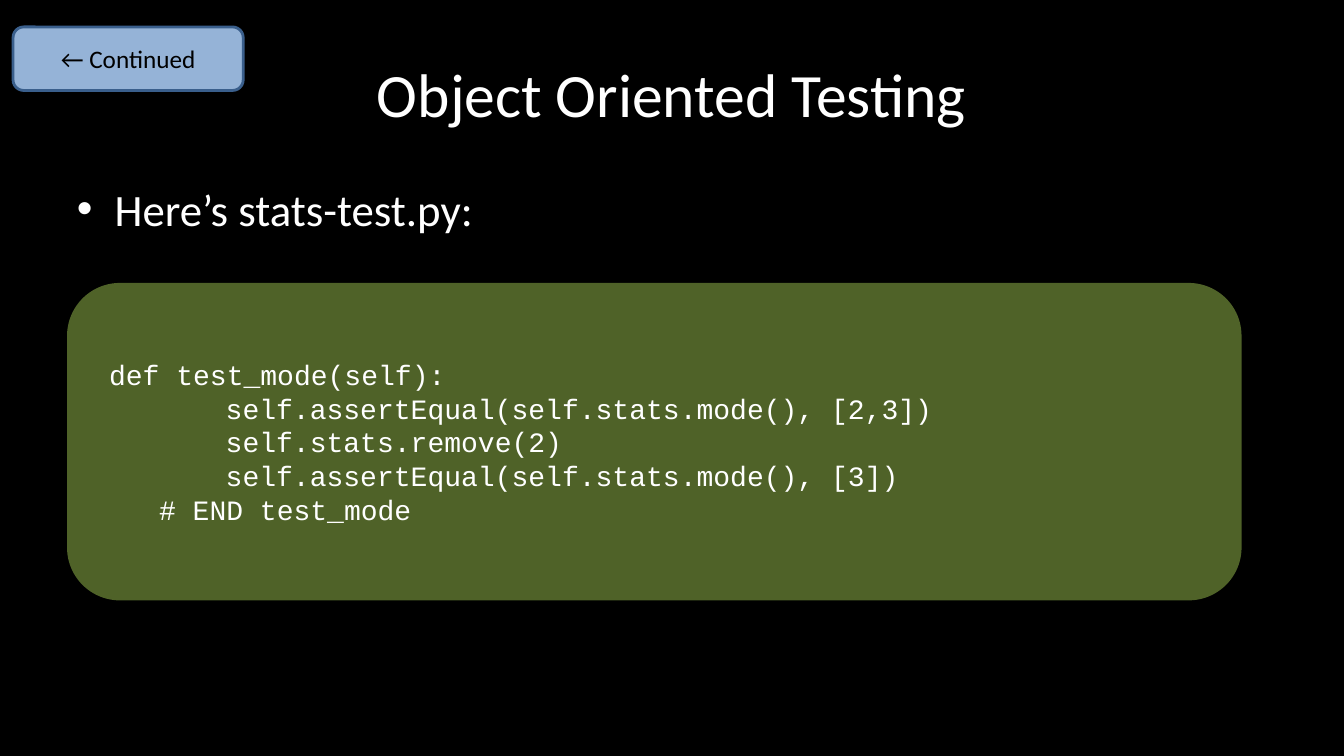
import pptx
import pptx.dml.color
import pptx.enum.shapes
import pptx.enum.text
import pptx.util
from lxml import etree

Cm, Pt = pptx.util.Cm, pptx.util.Pt
ROUNDED = pptx.enum.shapes.MSO_SHAPE.ROUNDED_RECTANGLE
MIDDLE = pptx.enum.text.MSO_ANCHOR.MIDDLE
LEFT, CENTER = pptx.enum.text.PP_ALIGN.LEFT, pptx.enum.text.PP_ALIGN.CENTER


def rgb(value):
    return pptx.dml.color.RGBColor.from_string(value)


def write(sp, text, size, color="FFFFFF", font="Calibri", align=LEFT, anchor=MIDDLE):
    tf = sp.text_frame
    tf.word_wrap = True
    tf.vertical_anchor = anchor
    tf.text = text
    for p in tf.paragraphs:
        p.alignment = align
        for r in p.runs:
            r.font.size = Pt(size)
            r.font.name = font
            r.font.color.rgb = rgb(color)
    return tf.paragraphs


prs = pptx.Presentation()
prs.slide_width, prs.slide_height = Cm(33.87), Cm(19.05)
s = prs.slides.add_slide(prs.slide_layouts[6])
s.background.fill.solid()
s.background.fill.fore_color.rgb = rgb("000000")

# Bulleted introduction
intro = s.shapes.add_textbox(Cm(1.69), Cm(4.45), Cm(30.48), Cm(12.57))
p = write(intro, "Here’s stats-test.py:", 32,
          anchor=pptx.enum.text.MSO_ANCHOR.TOP)[0]
p.space_before = Pt(6.4)
pPr = p._p.get_or_add_pPr()
pPr.set("marL", str(Cm(0.95)))
pPr.set("indent", str(-Cm(0.95)))
ns = pptx.oxml.ns.qn
etree.SubElement(pPr, ns("a:buFont")).set("typeface", "Arial")
etree.SubElement(pPr, ns("a:buChar")).set("char", "•")

# Title
title = s.shapes.add_textbox(Cm(1.69), Cm(0.76), Cm(30.48), Cm(3.18))
write(title, "Object Oriented Testing", 44, align=CENTER)

# Continuation tag
tag = s.shapes.add_shape(ROUNDED, Cm(0.33), Cm(0.68), Cm(5.8), Cm(1.6))
tag.shadow.inherit = False
tag.fill.solid()
tag.fill.fore_color.rgb = rgb("95B3D7")
tag.line.color.rgb = rgb("3A5F8C")
tag.line.width = Pt(2)
write(tag, "← Continued", 18, color="000000", align=CENTER)

# Code panel, each line indented by a number of characters
code = [
    (1, "def test_mode(self):"),
    (8, "self.assertEqual(self.stats.mode(), [2,3])"),
    (8, "self.stats.remove(2)"),
    (8, "self.assertEqual(self.stats.mode(), [3])"),
    (4, "# END test_mode"),
]
panel = s.shapes.add_shape(ROUNDED, Cm(1.69), Cm(7.13), Cm(29.6), Cm(8))
panel.shadow.inherit = False
panel.fill.solid()
panel.fill.fore_color.rgb = rgb("4F6228")
panel.line.fill.background()
lines = write(panel, "\n".join(text for _, text in code), 20, font="Courier New")
char_width = Cm(0.42)
for p, (indent, _) in zip(lines, code):
    p._p.get_or_add_pPr().set("marL", str(indent * char_width))

prs.save("out.pptx")
